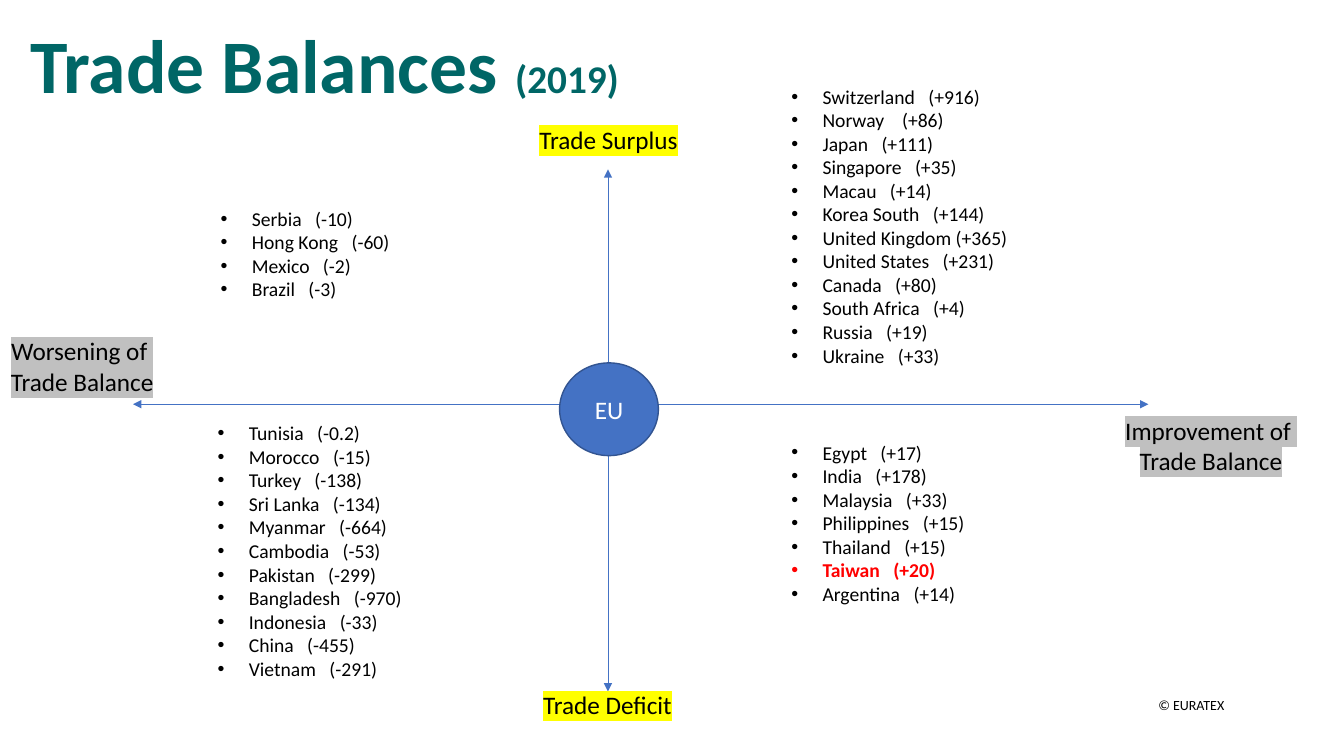
from dataclasses import dataclass

from lxml import etree
from pptx import Presentation
from pptx.dml.color import RGBColor
from pptx.enum.shapes import MSO_CONNECTOR, MSO_SHAPE
from pptx.enum.text import MSO_ANCHOR, MSO_AUTO_SIZE, PP_ALIGN
from pptx.oxml.ns import qn
from pptx.util import Inches, Pt

STRAIGHT = MSO_CONNECTOR.STRAIGHT
OVAL = MSO_SHAPE.OVAL
MIDDLE, TOP = MSO_ANCHOR.MIDDLE, MSO_ANCHOR.TOP
GROW, FIXED = MSO_AUTO_SIZE.SHAPE_TO_FIT_TEXT, MSO_AUTO_SIZE.NONE
CENTER, LEFT = PP_ALIGN.CENTER, PP_ALIGN.LEFT


@dataclass(frozen=True)
class Theme:
    """Colours and type sizes of the slide."""
    font: str = "Calibri"
    black: str = "000000"
    white: str = "FFFFFF"
    teal: str = "006666"
    blue: str = "4472C4"
    navy: str = "325491"
    red: str = "FF0000"
    yellow: str = "FFFF00"
    silver: str = "C0C0C0"
    title: int = 54
    year: int = 28
    label: int = 18
    country: int = 14
    credit: int = 10


COUNTRY_LISTS = [
    ((7.75, 0.79, 3.16, 2.93), [
        ("Switzerland", "+916"), ("Norway", "+86"), ("Japan", "+111"),
        ("Singapore", "+35"), ("Macau", "+14"), ("Korea South", "+144"),
        ("United Kingdom", "+365"), ("United States", "+231"), ("Canada", "+80"),
        ("South Africa", "+4"), ("Russia", "+19"), ("Ukraine", "+33")]),
    ((7.75, 4.32, 2.35, 1.75), [
        ("Egypt", "+17"), ("India", "+178"), ("Malaysia", "+33"),
        ("Philippines", "+15"), ("Thailand", "+15"), ("Taiwan", "+20"),
        ("Argentina", "+14")]),
    ((2.09, 2, 2.64, 1.04), [
        ("Serbia", "-10"), ("Hong Kong", "-60"), ("Mexico", "-2"), ("Brazil", "-3")]),
    ((2.06, 4.13, 2.34, 2.69), [
        ("Tunisia", "-0.2"), ("Morocco", "-15"), ("Turkey", "-138"),
        ("Sri Lanka", "-134"), ("Myanmar", "-664"), ("Cambodia", "-53"),
        ("Pakistan", "-299"), ("Bangladesh", "-970"), ("Indonesia", "-33"),
        ("China", "-455"), ("Vietnam", "-291")]),
]
HIGHLIGHTED_COUNTRY = "Taiwan"
GAP_TRACKING = {"Norway": 950, "United Kingdom": 0}
DEFAULT_TRACKING = 630


class SlideBuilder:
    """Adds styled elements to one slide."""

    def __init__(self, page, theme):
        self.page = page
        self.theme = theme

    def add_span(self, para, text, size, color, bold=False, highlight=None):
        """Add a formatted run to a paragraph."""
        span = para.add_run()
        span.text = text
        formats = {"name": self.theme.font, "size": Pt(size), "bold": bold}
        for name, value in formats.items():
            setattr(span.font, name, value)
        span.font.fill.solid()
        span.font.fill.fore_color.rgb = RGBColor.from_string(color)
        if highlight:
            marker = etree.Element(qn("a:highlight"))
            etree.SubElement(marker, qn("a:srgbClr"), val=highlight)
            span.font._element.find(qn("a:solidFill")).addnext(marker)
        return span

    def add_box(self, place, wrap=True, anchor=TOP, auto_size=GROW):
        """Add an empty text box and return its text frame."""
        frame = self.page.shapes.add_textbox(*map(Inches, place)).text_frame
        formats = {"word_wrap": wrap, "vertical_anchor": anchor, "auto_size": auto_size}
        for name, value in formats.items():
            setattr(frame, name, value)
        return frame

    def add_paragraphs(self, frame, count, align=LEFT):
        """Return the given number of aligned paragraphs of a frame."""
        paras = [frame.paragraphs[0]] + [frame.add_paragraph() for _ in range(count - 1)]
        for para in paras:
            para.alignment = align
        return paras

    def add_title(self, place, text, year):
        """Add the title with its smaller year."""
        frame = self.add_box(place, anchor=MIDDLE, auto_size=FIXED)
        para = frame.paragraphs[0]
        para.line_spacing = 0.9
        for words, size in ((text, self.theme.title), (year, self.theme.year)):
            self.add_span(para, words, size, self.theme.teal, bold=True)

    def add_credit(self, place, text):
        """Add the small copyright line."""
        para = self.add_box(place).paragraphs[0]
        self.add_span(para, text, self.theme.credit, self.theme.black)

    def add_label(self, place, lines, highlight):
        """Add a highlighted axis label."""
        frame = self.add_box(place, wrap=False)
        for para, line in zip(self.add_paragraphs(frame, len(lines), CENTER), lines):
            self.add_span(para, line, self.theme.label, self.theme.black, highlight=highlight)

    def add_countries(self, place, countries):
        """Add a bulleted list of countries with their balances."""
        paras = self.add_paragraphs(self.add_box(place), len(countries))
        for para, (country, balance) in zip(paras, countries):
            properties = para._p.get_or_add_pPr()
            properties.set("marL", str(Inches(0.31)))
            properties.set("indent", str(Inches(-0.31)))
            etree.SubElement(properties, qn("a:buFont"), typeface="Arial")
            etree.SubElement(properties, qn("a:buChar"), char="•")
            bold = country == HIGHLIGHTED_COUNTRY
            color = self.theme.red if bold else self.theme.black
            name, gap, value = [
                self.add_span(para, text, self.theme.country, color, bold)
                for text in (country, " ", f"({balance})")]
            tracking = GAP_TRACKING.get(country, DEFAULT_TRACKING)
            gap.font._element.set("spc", str(tracking))

    def add_axis(self, start, end):
        """Add a thin axis with an arrowhead at both ends."""
        axis = self.page.shapes.add_connector(STRAIGHT, *map(Inches, start + end))
        axis.line.color.rgb = RGBColor.from_string(self.theme.blue)
        axis.line.width = Pt(0.5)
        outline = axis.line._get_or_add_ln()
        for tag in ("a:headEnd", "a:tailEnd"):
            etree.SubElement(outline, qn(tag), type="triangle")
        etree.SubElement(axis._element.spPr, qn("a:effectLst"))

    def add_hub(self, place, text):
        """Add the labelled circle where the axes cross."""
        hub = self.page.shapes.add_shape(OVAL, *map(Inches, place))
        hub.shadow.inherit = False
        hub.fill.solid()
        hub.fill.fore_color.rgb = RGBColor.from_string(self.theme.blue)
        hub.line.color.rgb = RGBColor.from_string(self.theme.navy)
        hub.line.width = Pt(1)
        hub.text_frame.vertical_anchor = MIDDLE
        para = self.add_paragraphs(hub.text_frame, 1, CENTER)[0]
        self.add_span(para, text, self.theme.label, self.theme.white)


def main():
    """Build the trade balance slide and save it."""
    deck = Presentation()
    deck.slide_width, deck.slide_height = Inches(13.33), Inches(7.5)
    theme = Theme()
    builder = SlideBuilder(deck.slides.add_slide(deck.slide_layouts[6]), theme)

    builder.add_credit((11.39, 6.86, 1.03, 0.27), "© EURATEX")
    builder.add_title((0.2, -0.04, 7.71, 1.45), "Trade Balances ", "(2019)")
    builder.add_axis((6.03, 1.68), (6.03, 6.86))
    builder.add_axis((1.32, 4.01), (11.39, 4.01))
    labels = [
        ((5.24, 1.18, 1.59, 0.4), ["Trade Surplus"], theme.yellow),
        ((5.28, 6.79, 1.49, 0.4), ["Trade Deficit"], theme.yellow),
        ((11.05, 4.07, 1.92, 0.71), ["Improvement of ", "Trade Balance"], theme.silver),
        ((0, 3.28, 1.63, 0.71), ["Worsening of ", "Trade Balance"], theme.silver),
    ]
    for place, lines, highlight in labels:
        builder.add_label(place, lines, highlight)
    for place, countries in COUNTRY_LISTS:
        builder.add_countries(place, countries)
    builder.add_hub((5.55, 3.6, 0.98, 0.92), "EU")
    deck.save("out.pptx")


if __name__ == "__main__":
    main()
